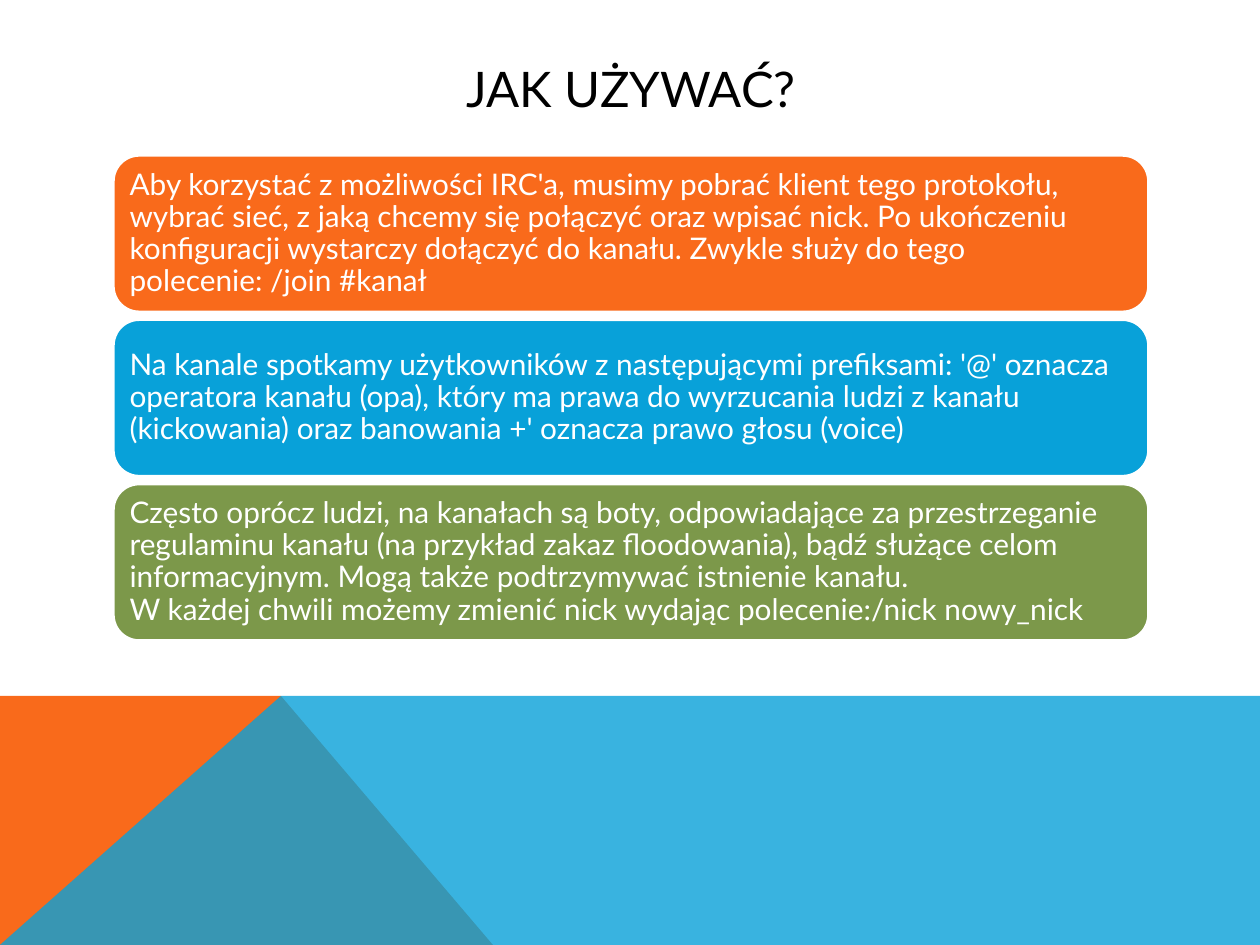
from lxml import etree
from pptx import Presentation
from pptx.dml.color import RGBColor
from pptx.enum.shapes import MSO_SHAPE
from pptx.enum.text import MSO_ANCHOR, MSO_AUTO_SIZE, PP_ALIGN
from pptx.oxml.ns import qn
from pptx.util import Pt

EMU_PER_PX = 914400 / 126
SLIDE_WIDTH, SLIDE_HEIGHT = 1260, 945
TITLE_ONLY = 5
ROUNDED = MSO_SHAPE.ROUNDED_RECTANGLE
MIDDLE = MSO_ANCHOR.MIDDLE
NO_AUTOFIT = MSO_AUTO_SIZE.NONE
LEFT, CENTER = PP_ALIGN.LEFT, PP_ALIGN.CENTER

FONT = "Lato"
BLACK = RGBColor(0x00, 0x00, 0x00)
WHITE = RGBColor(0xFF, 0xFF, 0xFF)
ORANGE = RGBColor(0xF9, 0x6A, 0x1B)
BLUE = RGBColor(0x08, 0xA1, 0xD9)
GREEN = RGBColor(0x7C, 0x98, 0x4A)

# Each card: fill colour and its lines, split only at forced breaks
CARDS = [
    (ORANGE, ["Aby korzystać z możliwości IRC'a, musimy pobrać klient tego "
              "protokołu, wybrać sieć, z jaką chcemy się połączyć oraz wpisać "
              "nick. Po ukończeniu konfiguracji wystarczy dołączyć do kanału. "
              "Zwykle służy do tego polecenie: /join #kanał"]),
    (BLUE, ["Na kanale spotkamy użytkowników z następującymi prefiksami: '@' "
            "oznacza operatora kanału (opa), który ma prawa do wyrzucania "
            "ludzi z kanału (kickowania) oraz banowania +' oznacza prawo "
            "głosu (voice)"]),
    (GREEN, ["Często oprócz ludzi, na kanałach są boty, odpowiadające za "
             "przestrzeganie regulaminu kanału (na przykład zakaz "
             "floodowania), bądź służące celom informacyjnym. Mogą także "
             "podtrzymywać istnienie kanału.",
             "W każdej chwili możemy zmienić nick wydając polecenie:/nick "
             "nowy_nick"]),
]


def px(length):
    return round(length * EMU_PER_PX)


def add_run(paragraph, text, size, color):
    run = paragraph.add_run()
    run.text = text
    run.font.name = FONT
    run.font.size = Pt(size)
    run.font.color.rgb = color


def set_frame(frame, inset):
    frame.word_wrap = True
    frame.auto_size = NO_AUTOFIT
    frame.vertical_anchor = MIDDLE
    frame.margin_left = frame.margin_right = px(inset)
    frame.margin_top = frame.margin_bottom = px(inset)


def fill_shape(shape, color):
    shape.shadow.inherit = False
    shape.fill.solid()
    shape.fill.fore_color.rgb = color


def place_title(slide, left, top, width, height, text):
    title = slide.shapes.title
    title.left, title.top = px(left), px(top)
    title.width, title.height = px(width), px(height)
    set_frame(title.text_frame, 6)
    paragraph = title.text_frame.paragraphs[0]
    paragraph.alignment = CENTER
    add_run(paragraph, text, 28, BLACK)


def add_polygon(slide, points, color):
    builder = slide.shapes.build_freeform(*points[0], scale=EMU_PER_PX)
    builder.add_line_segments(points[1:], close=True)
    shape = builder.convert_to_shape()
    fill_shape(shape, color)
    shape.line.fill.background()
    return shape


def add_footer_band(slide, left, top, width, height):
    right, bottom = left + width, top + height
    peak = (left + 281, top)
    add_polygon(slide, [(left, bottom), (left, top), peak,
                        (left + 493, bottom)], ORANGE)
    overlay = add_polygon(slide, [(left, bottom), peak, (right, top),
                                  (right, bottom)], BLUE)
    # The blue overlay lets the orange shape show through
    color = overlay.fill._xPr.find(qn("a:solidFill"))[0]
    etree.SubElement(color, qn("a:alpha"), val="80000")


def add_card(slide, left, top, width, height, color, lines):
    card = slide.shapes.add_shape(ROUNDED, px(left), px(top),
                                  px(width), px(height))
    fill_shape(card, color)
    card.line.color.rgb = WHITE
    card.line.width = Pt(2)
    set_frame(card.text_frame, 9)
    paragraph = card.text_frame.paragraphs[0]
    paragraph.alignment = LEFT
    paragraph.line_spacing = 0.9
    for index, line in enumerate(lines):
        if index:
            paragraph.add_line_break()
        add_run(paragraph, line, 17, WHITE)


def add_card_stack(slide, left, top, width, height, gap=7):
    card_height = (height - gap * (len(CARDS) - 1)) / len(CARDS)
    for index, (color, lines) in enumerate(CARDS):
        add_card(slide, left, top + index * (card_height + gap),
                 width, card_height, color, lines)


def main():
    presentation = Presentation()
    presentation.slide_width = px(SLIDE_WIDTH)
    presentation.slide_height = px(SLIDE_HEIGHT)
    slide = presentation.slides.add_slide(
        presentation.slide_layouts[TITLE_ONLY])
    add_footer_band(slide, 0, 696, SLIDE_WIDTH, SLIDE_HEIGHT - 696)
    place_title(slide, 113, 50, 1036, 76, "JAK UŻYWAĆ?")
    add_card_stack(slide, 113, 155, 1036, 486)
    presentation.save("out.pptx")


if __name__ == "__main__":
    main()
